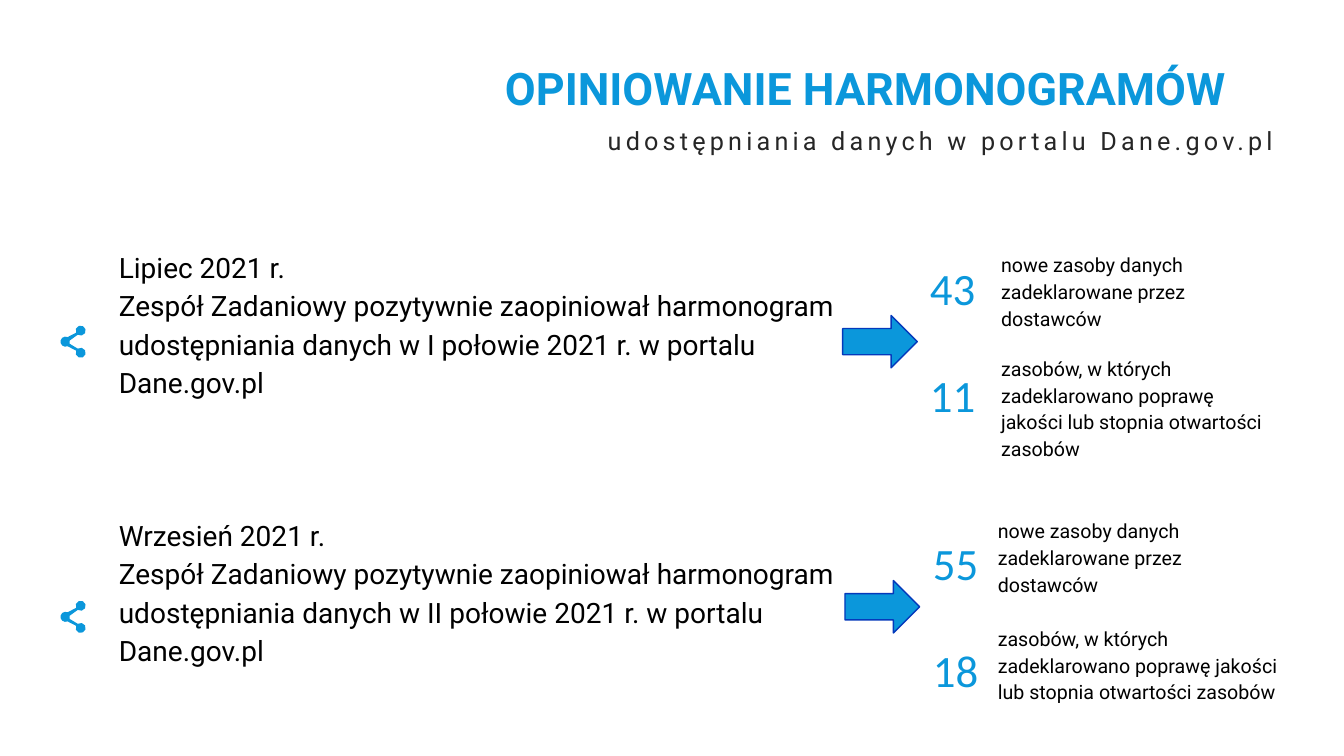
"""Build the slide on opinions issued on data-sharing schedules."""
from math import cos, radians, sin

from pptx import Presentation
from pptx.dml.color import RGBColor
from pptx.enum.shapes import MSO_SHAPE
from pptx.enum.text import PP_ALIGN
from pptx.util import Inches, Pt

RIGHT_ARROW = MSO_SHAPE.RIGHT_ARROW
LEFT, RIGHT = PP_ALIGN.LEFT, PP_ALIGN.RIGHT

THEME = {
    "blue": RGBColor.from_string("0B97DB"),
    "outline": RGBColor.from_string("0439BB"),
    "grey": RGBColor.from_string("262626"),
    "black": RGBColor.from_string("000000"),
    "text": "Roboto",
    "number": "Calibri",
    "large": Pt(32),
    "body": Pt(20),
    "subtitle": Pt(18),
    "small": Pt(14),
}

deck = Presentation()
deck.slide_width, deck.slide_height = Inches(13.33), Inches(7.5)
page = deck.slides.add_slide(deck.slide_layouts[6])
COLUMN, ROW = deck.slide_width / 100, deck.slide_height / 100


def place(left, top, width, height):
    """Turn percentages of the slide into lengths."""
    return int(left * COLUMN), int(top * ROW), int(width * COLUMN), int(height * ROW)


def add_text(area, lines, size, color, font="text", spacing=1.0, align=LEFT, bold=False):
    """Add a text box from (text, points before) pairs and return its frame."""
    frame = page.shapes.add_textbox(*place(*area)).text_frame
    frame.word_wrap = True
    for index, (text, gap) in enumerate(lines):
        para = frame.paragraphs[0] if index == 0 else frame.add_paragraph()
        para.add_run().text = text
        para.alignment = align
        para.line_spacing = spacing
        para.space_before = Pt(gap)
        para.font.name = THEME[font]
        para.font.size = THEME[size]
        para.font.color.rgb = THEME[color]
        para.font.bold = bold
    return frame


add_text((36.83, 7.4, 59.1, 8.53), [("OPINIOWANIE HARMONOGRAMÓW", 0)],
         "large", "blue", bold=True)
subtitle = add_text((37.35, 15.9, 58.15, 5.33),
                    [("udostępniania danych w portalu Dane.gov.pl", 0)],
                    "subtitle", "grey", align=RIGHT)
subtitle.paragraphs[0].runs[0]._r.get_or_add_rPr().set("spc", "300")

opinions = []
for month, half, gap in (("Lipiec", "I", 0), ("Wrzesień", "II", 82)):
    opinions += [
        (f"{month} 2021 r.", gap),
        ("Zespół Zadaniowy pozytywnie zaopiniował harmonogram udostępniania "
         f"danych w {half} połowie 2021 r. w portalu Dane.gov.pl", 0),
    ]
body = add_text((8.1, 27.47, 54.75, 64.4), opinions, "body", "black", spacing=1.14)
body.margin_top = Inches(0.38)

NODES = (
    (0.2, 0.05, 125, -205),
    (0.05, 0.16, -65, -295),
    (0.2, 0.27, 205, -125),
)
STEPS = 7
share_outline = [(0.09, 0.18), (0.09, 0.15)]
for center_x, center_y, start, end in NODES:
    for step in range(STEPS + 1):
        angle = radians(start + (end - start) * step / STEPS)
        share_outline.append((center_x + 0.05 * cos(angle), center_y + 0.05 * sin(angle)))

ROUNDS = (
    {"icon": 43.07, "arrow": (62.7, 41.73), "numbers": (68.45, 33.85), "new": "43",
     "improved": "11", "labels": (73.75, 32.4, 22.2, 30), "gap": 16.4},
    {"icon": 79.47, "arrow": (62.87, 76.8), "numbers": (68.67, 70.2), "new": "55",
     "improved": "18", "labels": (73.5, 67.6, 22.42, 42.67), "gap": 19.2},
)
for item in ROUNDS:
    points = [(4.5 * COLUMN + Inches(x), item["icon"] * ROW + Inches(y))
              for x, y in share_outline]
    builder = page.shapes.build_freeform(*map(int, points[0]))
    builder.add_line_segments([(int(x), int(y)) for x, y in points[1:]], close=True)
    icon = builder.convert_to_shape()
    icon.shadow.inherit = False
    icon.fill.solid()
    icon.fill.fore_color.rgb = THEME["blue"]
    icon.line.fill.background()

    arrow = page.shapes.add_shape(RIGHT_ARROW, *place(*item["arrow"], 5.55, 6.93))
    arrow.shadow.inherit = False
    arrow.fill.solid()
    arrow.fill.fore_color.rgb = THEME["blue"]
    arrow.line.color.rgb = THEME["outline"]
    arrow.line.width = Pt(1)

    add_text((*item["numbers"], 6.08, 22.93), [(item["new"], 0), (item["improved"], 38)],
             "large", "blue", font="number")
    add_text(item["labels"], [
        ("nowe zasoby danych zadeklarowane przez dostawców", 0),
        ("zasobów, w których zadeklarowano poprawę jakości lub stopnia otwartości zasobów",
         item["gap"]),
    ], "small", "black", spacing=1.14)

deck.save("out.pptx")
